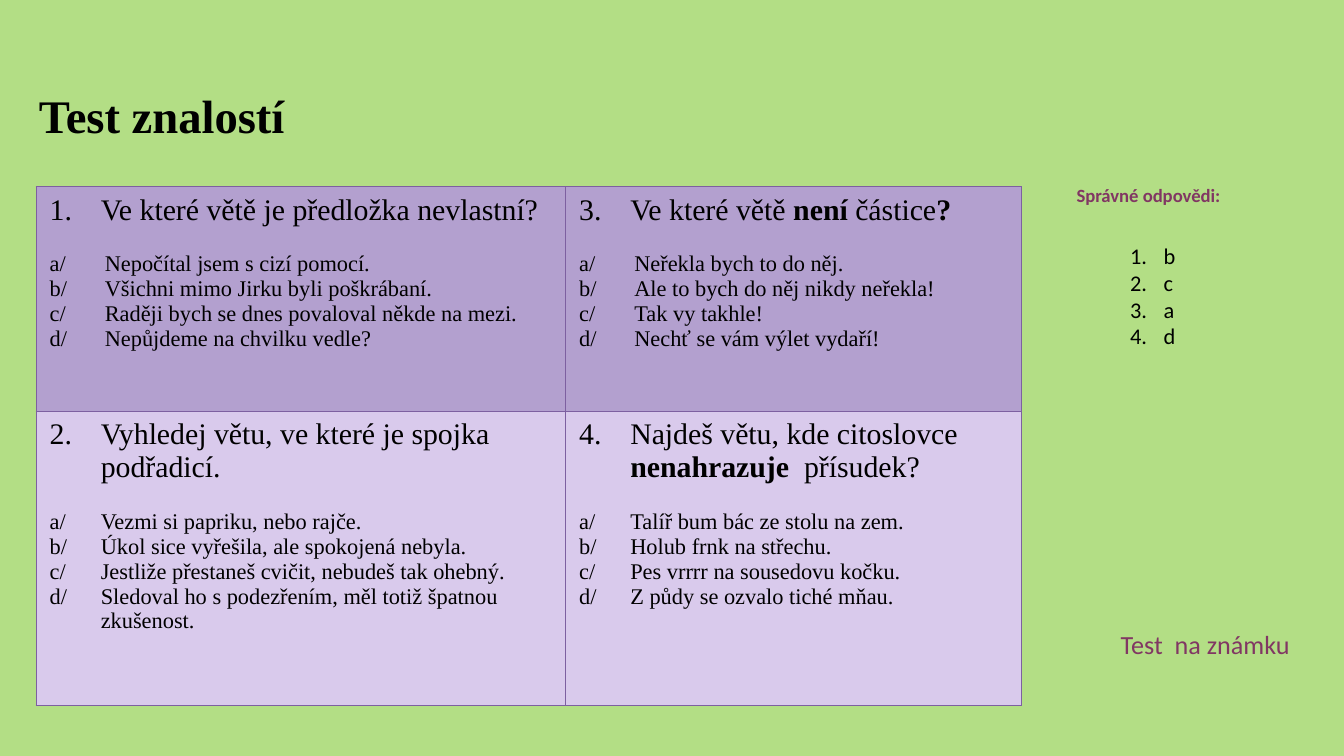
import pptx
import pptx.util
import pptx.dml.color
import pptx.enum.text
import pptx.oxml
from lxml import etree

Inches = pptx.util.Inches
Pt = pptx.util.Pt
RGBColor = pptx.dml.color.RGBColor
PP_ALIGN = pptx.enum.text.PP_ALIGN
ANCHOR = pptx.enum.text.MSO_ANCHOR
AUTO_SIZE = pptx.enum.text.MSO_AUTO_SIZE

GREEN = RGBColor(0xB3, 0xDE, 0x85)
BLACK = RGBColor(0x00, 0x00, 0x00)
PLUM = RGBColor(0x81, 0x37, 0x63)
BORDER = RGBColor(0x7D, 0x60, 0xA0)
ROW_FILLS = [RGBColor(0xB3, 0xA0, 0xCF), RGBColor(0xD9, 0xCA, 0xEC)]
SERIF, SANS = "Times New Roman", "Calibri"
NAMESPACE = "http://schemas.openxmlformats.org/drawingml/2006/main"

# Questions in numbered order; words between bars are bold
QUESTIONS = [
    ("Ve které větě je předložka nevlastní?",
     ["Nepočítal jsem s cizí pomocí.",
      "Všichni mimo Jirku byli poškrábaní.",
      "Raději bych se dnes povaloval někde na mezi.",
      "Nepůjdeme na chvilku vedle?"]),
    ("Vyhledej větu, ve které je spojka podřadicí.",
     ["Vezmi si papriku, nebo rajče.",
      "Úkol sice vyřešila, ale spokojená nebyla.",
      "Jestliže přestaneš cvičit, nebudeš tak ohebný.",
      "Sledoval ho s podezřením, měl totiž špatnou zkušenost."]),
    ("Ve které větě |není |částice|?",
     ["Neřekla bych to do něj.",
      "Ale to bych do něj nikdy neřekla!",
      "Tak vy takhle!",
      "Nechť se vám výlet vydaří!"]),
    ("Najdeš větu, kde citoslovce |nenahrazuje | přísudek?",
     ["Talíř bum bác ze stolu na zem.",
      "Holub frnk na střechu.",
      "Pes vrrrr na sousedovu kočku.",
      "Z půdy se ozvalo tiché mňau."]),
]


def write(frame, text, size, font=SERIF, color=BLACK, bold=False,
          align=PP_ALIGN.LEFT, indent=0, number=None, before=0):
    """Add a paragraph, reusing the first one while it is empty."""
    para = frame.paragraphs[0]
    if para.runs:
        para = frame.add_paragraph()
    para.alignment = align
    para.space_before = Pt(before)
    if indent:
        props = para._p.get_or_add_pPr()
        props.set("marL", str(Inches(indent)))
        props.set("indent", str(-Inches(indent)))
        if number:
            numbering = etree.SubElement(props, f"{{{NAMESPACE}}}buAutoNum")
            numbering.set("type", "arabicPeriod")
            numbering.set("startAt", str(number))
    for index, part in enumerate(text.split("|")):
        span = para.add_run()
        span.text = part
        span.font.name = font
        span.font.size = Pt(size)
        span.font.color.rgb = color
        span.font.bold = bold or index % 2 == 1


def add_box(page, left, top, width, height):
    box = page.shapes.add_textbox(Inches(left), Inches(top), Inches(width), Inches(height))
    box.text_frame.word_wrap = True
    return box.text_frame


def add_title(page, text):
    title = page.shapes.title
    title.left, title.top = Inches(0.19), Inches(0.53)
    title.width, title.height = Inches(3.27), Inches(0.65)
    frame = title.text_frame
    frame.auto_size = AUTO_SIZE.NONE
    frame.vertical_anchor = ANCHOR.MIDDLE
    write(frame, text, 25, bold=True)


def style_cell(cell, fill):
    props = cell._tc.get_or_add_tcPr()
    for side in ("lnL", "lnR", "lnT", "lnB"):
        props.append(pptx.oxml.parse_xml(
            f'<a:{side} xmlns:a="{NAMESPACE}" w="{Pt(0.75)}"><a:solidFill>'
            f'<a:srgbClr val="{BORDER}"/></a:solidFill></a:{side}>'))
    cell.fill.solid()
    cell.fill.fore_color.rgb = fill


def add_questions(page):
    widths, heights = [3.94, 3.39], [1.67, 2.19]
    option_indents = [0.41, 0.38]
    table = page.shapes.add_table(2, 2, Inches(0.27), Inches(1.39),
                                  Inches(sum(widths)), Inches(sum(heights))).table
    table.first_row = table.horz_banding = False
    for column, width in zip(table.columns, widths):
        column.width = Inches(width)
    for row, height in zip(table.rows, heights):
        row.height = Inches(height)
    # Numbers run down the first column, then down the second
    for index, (question, options) in enumerate(QUESTIONS):
        column, row = divmod(index, 2)
        cell = table.cell(row, column)
        style_cell(cell, ROW_FILLS[row])
        write(cell.text_frame, question, 16, indent=0.38, number=index + 1)
        for letter, option in zip("abcd", options):
            write(cell.text_frame, f"{letter}/\t{option}", 12,
                  indent=option_indents[row], before=13.5 if letter == "a" else 0)


def add_answers(page):
    heading = add_box(page, 7.76, 1.32, 1.57, 0.27)
    write(heading, "Správné odpovědi:", 10, font=SANS, color=PLUM, bold=True,
          align=PP_ALIGN.CENTER)
    answers = add_box(page, 8.31, 1.55, 0.55, 1.31)
    answers.margin_top = Inches(0.25)
    for answer in "bcad":
        write(answers, answer, 12, font=SANS, indent=0.25, number=1)


def main():
    deck = pptx.Presentation()
    deck.slide_width = Inches(10)
    deck.slide_height = deck.slide_width * 9 // 16
    page = deck.slides.add_slide(deck.slide_layouts[5])
    page.background.fill.solid()
    page.background.fill.fore_color.rgb = GREEN

    add_title(page, "Test znalostí")
    add_questions(page)
    add_answers(page)

    # Closing note
    note = add_box(page, 8.24, 4.63, 1.57, 0.34)
    write(note, "Test  na známku", 14, font=SANS, color=PLUM)
    deck.save("out.pptx")


if __name__ == "__main__":
    main()
